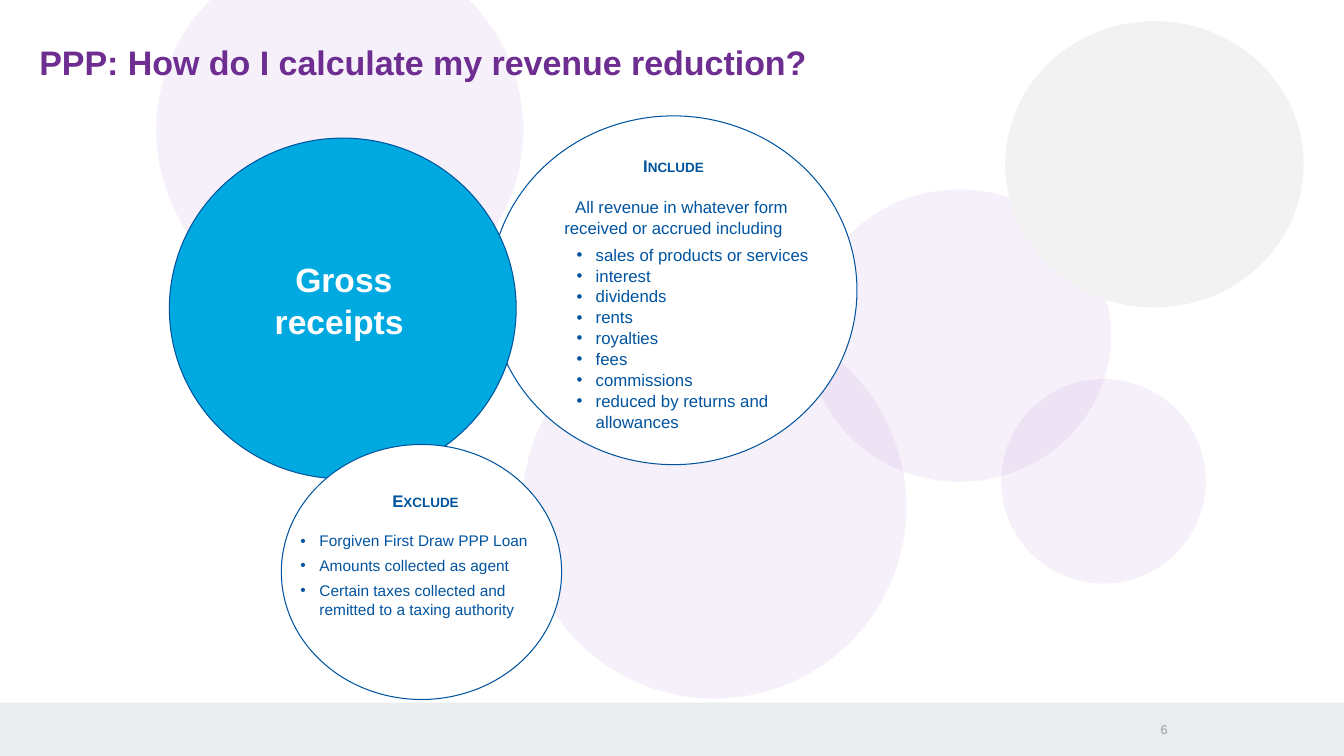
import pptx
import pptx.dml.color
import pptx.enum.shapes
import pptx.enum.text
import pptx.oxml
import pptx.oxml.ns
import pptx.util
from lxml import etree

Inches = pptx.util.Inches
Pt = pptx.util.Pt
ALIGN = pptx.enum.text.PP_ALIGN
SHAPE = pptx.enum.shapes.MSO_SHAPE

COLORS = {
    "purple": "6E2D91",
    "bubble": "AE6CD2",
    "grey": "F2F2F2",
    "footer": "EBECED",
    "number": "9A9B9C",
    "navy": "00549F",
    "blue": "00A9E0",
    "white": "FFFFFF",
}

BUBBLES = [
    (1.55, -0.53, 3.64, 3.64),
    (5.18, 3.12, 3.81, 3.81),
    (8.01, 1.88, 3.01, 2.9),
    (9.93, 3.76, 2.03, 2.03),
]
INCLUDED = [
    "sales of products or services",
    "interest",
    "dividends",
    "rents",
    "royalties",
    "fees",
    "commissions",
    "reduced by returns and allowances",
]
EXCLUDED = [
    "Forgiven First Draw PPP Loan",
    "Amounts collected as agent",
    "Certain taxes collected and remitted to a taxing authority",
]


def rgb(name):
    return pptx.dml.color.RGBColor.from_string(COLORS[name])


def add_filled(s, kind, box, fill, line=None, alpha=None):
    """Add a preset shape; alpha is its opacity in percent."""
    sp = s.shapes.add_shape(kind, *map(Inches, box))
    sp.shadow.inherit = False
    sp.fill.solid()
    sp.fill.fore_color.rgb = rgb(fill)
    if alpha is not None:
        color = sp.fill._xPr.find(".//" + pptx.oxml.ns.qn("a:srgbClr"))
        etree.SubElement(color, pptx.oxml.ns.qn("a:alpha"), val=str(alpha * 1000))
    if line:
        sp.line.color.rgb = rgb(line)
        sp.line.width = Pt(0.75)
    else:
        sp.line.fill.background()


def add_text_frame(s, box, inset=True):
    tf = s.shapes.add_textbox(*map(Inches, box)).text_frame
    tf.word_wrap = True
    if not inset:
        tf.margin_left = tf.margin_right = tf.margin_top = tf.margin_bottom = 0
    return tf


def add_paragraph(tf, text, size, color, bold=False, align=ALIGN.LEFT, after=0):
    p = tf.add_paragraph() if tf.text else tf.paragraphs[0]
    p.text = text
    p.alignment = align
    p.line_spacing = 1.04
    p.space_after = Pt(after)
    font = p.runs[0].font
    font.name = "Arial"
    font.size = Pt(size)
    font.bold = bold
    font.color.rgb = rgb(color)
    return p


def set_indent(p, left, first, right=0):
    pPr = p._p.get_or_add_pPr()
    pPr.set("marL", str(Inches(left)))
    pPr.set("marR", str(Inches(right)))
    pPr.set("indent", str(Inches(first)))
    return pPr


def add_heading(tf, text):
    """Add a small-caps heading followed by a line's gap."""
    p = add_paragraph(tf, text, 12, "navy", True, ALIGN.CENTER, after=14.4)
    p.runs[0].font._element.set("cap", "small")


def add_bullets(tf, items, size, left, after=0):
    for item in items:
        p = add_paragraph(tf, item, size, "navy", after=after)
        pPr = set_indent(p, left, -0.19)
        etree.SubElement(pPr, pptx.oxml.ns.qn("a:buFont"), typeface="Arial")
        etree.SubElement(pPr, pptx.oxml.ns.qn("a:buChar"), char="•")


def add_backdrop(s):
    add_filled(s, SHAPE.RECTANGLE, (-0.01, 6.97, 13.34, 0.54), "footer")
    for box in BUBBLES:
        add_filled(s, SHAPE.OVAL, box, "bubble", alpha=10)
    add_filled(s, SHAPE.OVAL, (9.97, 0.21, 2.96, 2.84), "grey")


def add_title_and_number(s):
    tf = add_text_frame(s, (0.39, 0.4, 12.53, 0.43), inset=False)
    add_paragraph(tf, "PPP: How do I calculate my revenue reduction?", 24.3, "purple", True)
    tf = add_text_frame(s, (11.42, 7.15, 0.16, 0.16), inset=False)
    tf.vertical_anchor = pptx.enum.text.MSO_ANCHOR.MIDDLE
    add_paragraph(tf, "6", 9, "number", align=ALIGN.RIGHT)


def add_include(s):
    add_filled(s, SHAPE.OVAL, (4.86, 1.15, 3.64, 3.46), "white", "navy")
    tf = add_text_frame(s, (5.12, 1.49, 3.12, 3.39))
    add_heading(tf, "Include")
    p = add_paragraph(tf, "All revenue in whatever form received or accrued including",
                      12, "navy", align=ALIGN.CENTER, after=3.8)
    set_indent(p, 0.1, 0.16, 0.1)
    add_bullets(tf, INCLUDED, 12, 0.69)


def add_gross_receipts(s):
    add_filled(s, SHAPE.OVAL, (1.68, 1.37, 3.44, 3.38), "blue", "navy")
    tf = add_text_frame(s, (2.2, 2.5, 2.42, 0.91))
    add_paragraph(tf, "Gross receipts ", 24, "white", True, ALIGN.CENTER)


def add_exclude(s):
    add_filled(s, SHAPE.OVAL, (2.79, 4.41, 2.78, 2.53), "white", "navy")
    tf = add_text_frame(s, (2.88, 4.81, 2.68, 1.36))
    add_heading(tf, "Exclude")
    add_bullets(tf, EXCLUDED, 11, 0.19, after=3.8)


def main():
    prs = pptx.Presentation()
    prs.slide_width = Inches(13.33)
    prs.slide_height = Inches(7.5)
    s = prs.slides.add_slide(prs.slide_layouts[6])
    add_backdrop(s)
    add_title_and_number(s)
    add_include(s)
    add_gross_receipts(s)
    add_exclude(s)
    prs.save("out.pptx")


if __name__ == "__main__":
    main()
